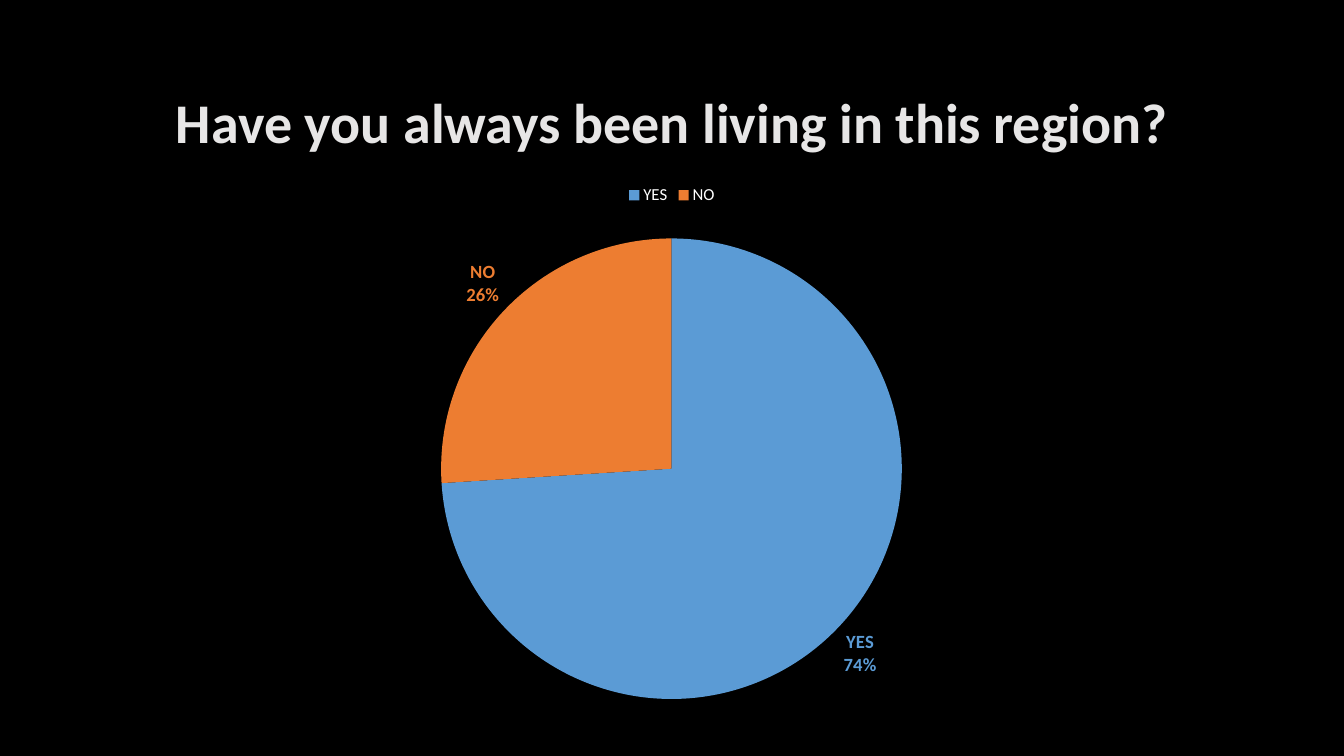
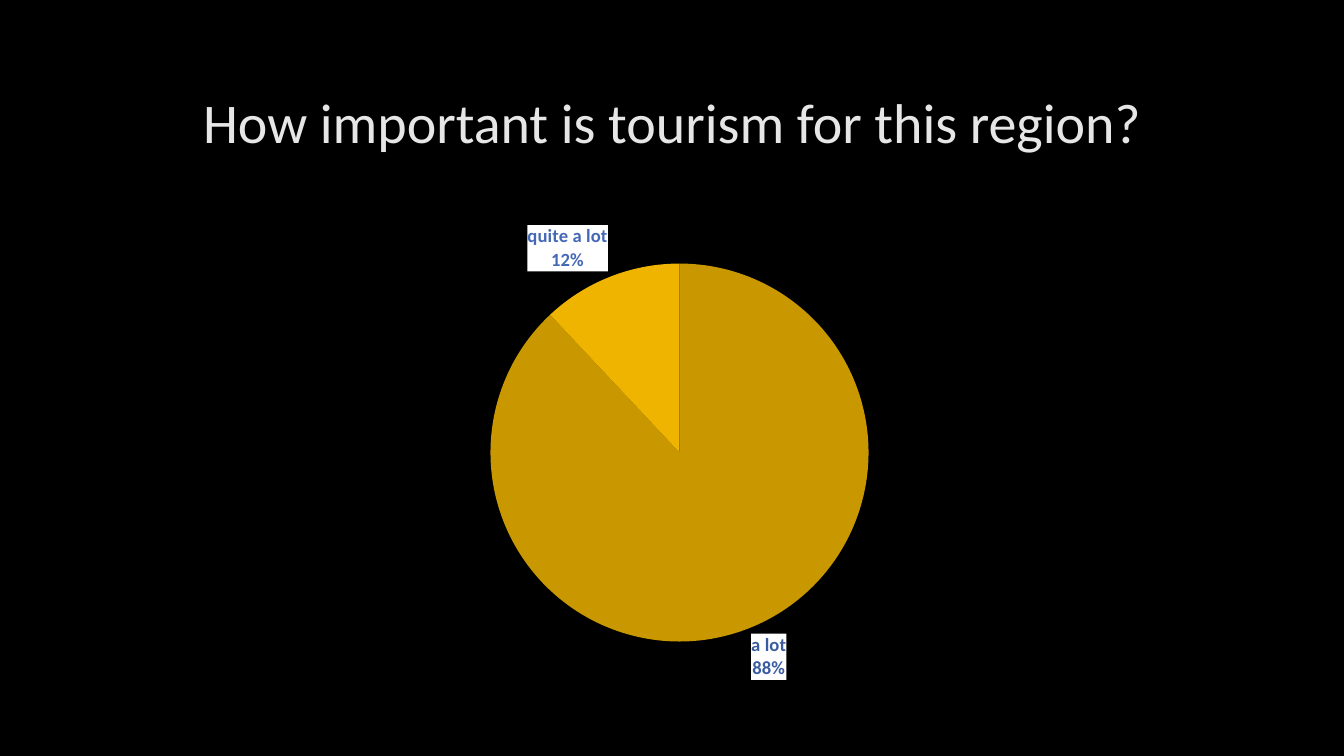
from lxml import etree
from pptx import Presentation
from pptx import util as u
from pptx.chart.data import CategoryChartData
from pptx.dml.color import RGBColor
from pptx.enum import chart as ch, text
from pptx.oxml import parse_xml
from pptx.oxml.ns import nsdecls, qn

WIDE, HIGH = u.Inches(13.33), u.Inches(7.5)
FACE = "Calibri"
BLACK, WHITE, PALE = "000000", "FFFFFF", "E7E6E6"
TITLE_BOX = (0.075, 0.09, 0.85, 0.14)
FLAGS = {"showLegendKey": 0, "showVal": 0, "showCatName": 1,
         "showSerName": 0, "showPercent": 1, "showBubbleSize": 0}
SLIDES = [
    {"title": "Have you always been living in this region?", "bold": True,
     "box": (0.034, 0.23, 0.932, 0.734), "pie": (6.66, 4.65, 4.57),
     "data": {"YES": 74, "NO": 26}, "fills": ("5B9BD5", "ED7D31"),
     "inks": ("5B9BD5", "ED7D31"), "plate": None, "legend": True},
    {"title": "How important is tourism for this region?", "bold": False,
     "box": (0.061, 0.272, 0.878, 0.653), "pie": (6.74, 4.49, 3.75),
     "data": {"a lot": 88, "quite a lot": 12}, "fills": ("C99800", "EFB400"),
     "inks": ("3A5CA0", "4468B5"), "plate": WHITE, "legend": False},
]


def paint(fill, tone):
    """Give a fill a solid colour from a hex string."""
    fill.solid()
    fill.fore_color.rgb = RGBColor.from_string(tone)


def style(font, size, tone, bold=False):
    """Set the shared face with a size, colour and weight."""
    for key, val in {"name": FACE, "size": u.Pt(size), "bold": bold}.items():
        setattr(font, key, val)
    font.color.rgb = RGBColor.from_string(tone)


def place(box):
    """Turn shares of the slide into lengths."""
    return [round(part * side) for part, side in zip(box, (WIDE, HIGH) * 2)]


def head(slide, words, bold):
    """Write the centred slide title."""
    frame = slide.shapes.add_textbox(*place(TITLE_BOX)).text_frame
    frame.word_wrap = True
    frame.vertical_anchor = text.MSO_ANCHOR.MIDDLE
    para = frame.paragraphs[0]
    para.alignment = text.PP_ALIGN.CENTER
    run = para.add_run()
    run.text = words
    style(run.font, 40, PALE, bold)


def fix(chart, box, pie):
    """Pin the pie's centre and diameter inside the chart box."""
    left, top, wide, high = place(box)
    mid_x, mid_y, size = (u.Inches(part) for part in pie)
    vals = {"x": (mid_x - size / 2 - left) / wide,
            "y": (mid_y - size / 2 - top) / high,
            "w": size / wide, "h": size / high}
    rows = "".join(f'<c:{key}Mode val="edge"/>' for key in "xy")
    rows += "".join(f'<c:{key} val="{val:.4f}"/>' for key, val in vals.items())
    area = next(chart.element.iter(qn("c:plotArea")))
    for old in area.findall(qn("c:layout")):
        area.remove(old)
    area.insert(0, parse_xml(
        f'<c:layout {nsdecls("c")}><c:manualLayout>'
        f'<c:layoutTarget val="inner"/>{rows}</c:manualLayout></c:layout>'))


def tag(chart, plate):
    """Show category and percent on each label, on an optional plate."""
    for label in chart.element.iter(qn("c:dLbl")):
        for key, val in FLAGS.items():
            label.find(qn(f"c:{key}")).set("val", str(val))
        etree.SubElement(label, qn("c:separator")).text = "\n"
        if plate:
            label.find(qn("c:txPr")).addprevious(parse_xml(
                f'<c:spPr {nsdecls("c", "a")}><a:solidFill>'
                f'<a:srgbClr val="{plate}"/></a:solidFill></c:spPr>'))


def graph(slide, item):
    """Draw a pie with coloured slices and outside labels."""
    data = CategoryChartData()
    data.categories = list(item["data"])
    data.add_series("Series 1", list(item["data"].values()))
    chart = slide.shapes.add_chart(
        ch.XL_CHART_TYPE.PIE, *place(item["box"]), data).chart
    chart.has_title = False
    style(chart.font, 10, WHITE)
    chart.has_legend = item["legend"]
    if item["legend"]:
        chart.legend.position = ch.XL_LEGEND_POSITION.TOP
        chart.legend.include_in_layout = False
        style(chart.legend.font, 12, WHITE)
    plot = chart.plots[0]
    plot.vary_by_categories = True
    for num, (tone, ink) in enumerate(zip(item["fills"], item["inks"])):
        point = plot.series[0].points[num]
        paint(point.format.fill, tone)
        point.format.line.fill.background()
        style(point.data_label.font, 13.3, ink, True)
        point.data_label.position = ch.XL_LABEL_POSITION.OUTSIDE_END
    tag(chart, item["plate"])
    fix(chart, item["box"], item["pie"])


def main():
    """Build and save the slides."""
    prs = Presentation()
    prs.slide_width, prs.slide_height = WIDE, HIGH
    paint(prs.slide_master.background.fill, BLACK)
    for item in SLIDES:
        slide = prs.slides.add_slide(prs.slide_layouts[6])
        head(slide, item["title"], item["bold"])
        graph(slide, item)
    prs.save("out.pptx")


if __name__ == "__main__":
    main()
